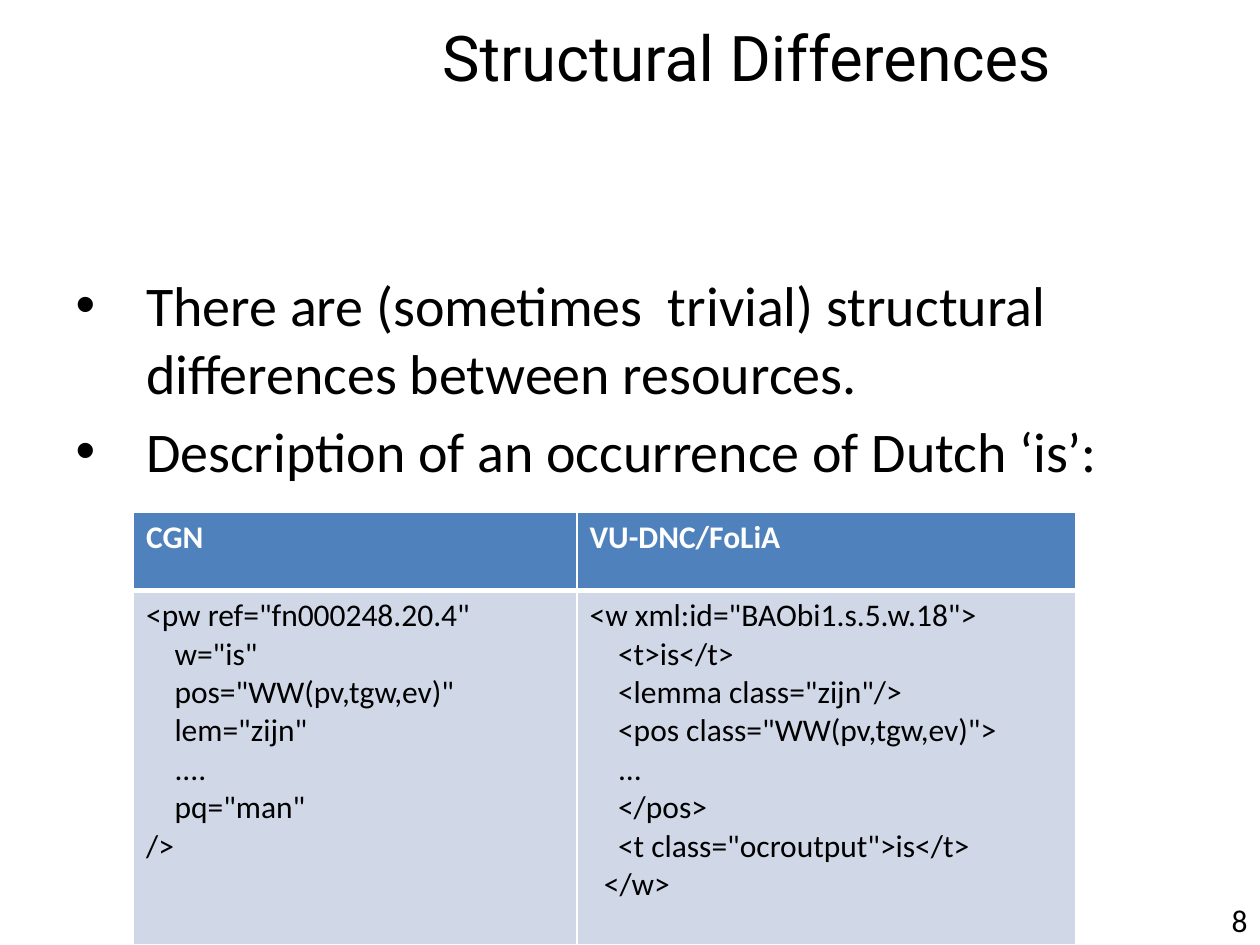
from lxml import etree
from pptx import Presentation
from pptx import util as u
from pptx.dml.color import RGBColor
from pptx.enum import text
from pptx.oxml.ns import qn

WIDE, HIGH = u.Inches(10), u.Inches(7.5)
BLACK = RGBColor(0, 0, 0)
WHITE = RGBColor(255, 255, 255)
BLUE = RGBColor(0x4F, 0x81, 0xBD)
PALE = RGBColor(0xD0, 0xD8, 0xE8)

POINTS = [
    "There are (sometimes  trivial) structural differences between resources.",
    "Description of an occurrence of Dutch ‘is’:",
]
HEADS = ["CGN", "VU-DNC/FoLiA"]
CODES = [
    """<pw ref="fn000248.20.4"
    w="is"
    pos="WW(pv,tgw,ev)"
    lem="zijn"
    ....
    pq="man"
/>""",
    """<w xml:id="BAObi1.s.5.w.18">
    <t>is</t>
    <lemma class="zijn"/>
    <pos class="WW(pv,tgw,ev)">
    ...
    </pos>
    <t class="ocroutput">is</t>
  </w>""",
]


def share(x, y, w, h):
    """Turn shares of the slide's size into lengths."""
    return int(x * WIDE), int(y * HIGH), int(w * WIDE), int(h * HIGH)


def place(shape, *box):
    shape.left, shape.top, shape.width, shape.height = share(*box)


def write(para, words, size=18, font="Calibri", color=BLACK, bold=False,
          align=text.PP_ALIGN.LEFT):
    para.text = words
    para.alignment = align
    for run in para.runs:
        face = run.font
        face.size, face.name, face.bold = u.Pt(size), font, bold
        face.color.rgb = color


def bullet(para, indent):
    props = para._p.get_or_add_pPr()
    props.set("marL", str(indent))
    props.set("indent", str(-indent))
    etree.SubElement(props, qn("a:buFont"), typeface="Arial")
    etree.SubElement(props, qn("a:buChar"), char="•")


def add_title(slide):
    title = slide.shapes.title
    place(title, 0.185, 0, 0.815, 0.12)
    frame = title.text_frame
    frame.vertical_anchor = text.MSO_ANCHOR.MIDDLE
    write(frame.paragraphs[0], "Structural Differences", size=36,
          font="Roboto", align=text.PP_ALIGN.CENTER)


def add_list(slide):
    body = slide.placeholders[1]
    place(body, 0.05, 0.28, 0.9, 0.62)
    frame = body.text_frame
    frame.auto_size = text.MSO_AUTO_SIZE.NONE
    for row, words in enumerate(POINTS):
        para = frame.add_paragraph() if row else frame.paragraphs[0]
        bullet(para, u.Inches(0.56))
        para.space_before = u.Pt(6.4 if row else 0)
        write(para, words, size=32)


def edge(cell, **widths):
    """Draw white borders; widths are points keyed by side L, R, T, B."""
    props = cell._tc.get_or_add_tcPr()
    for spot, side in enumerate("LRTB"):
        line = etree.Element(qn("a:ln" + side),
                             w=str(u.Pt(widths.get(side, 1))))
        fill = etree.SubElement(line, qn("a:solidFill"))
        etree.SubElement(fill, qn("a:srgbClr"), val=str(WHITE))
        props.insert(spot, line)


def fill_cell(cell, words, back, **style):
    cell.fill.solid()
    cell.fill.fore_color.rgb = back
    write(cell.text_frame.paragraphs[0], words, **style)


def add_table(slide):
    table = slide.shapes.add_table(
        2, 2, *share(0.106, 0.542, 0.748, 0.458)).table
    for col, wide in zip(table.columns, (3.52, 3.96)):
        col.width = u.Inches(wide)
    for row, high in zip(table.rows, (0.62, 2.81)):
        row.height = u.Inches(high)
    for col, (head, code) in enumerate(zip(HEADS, CODES)):
        top, low = table.cell(0, col), table.cell(1, col)
        fill_cell(top, head, BLUE, color=WHITE, bold=True)
        fill_cell(low, code, PALE)
        edge(top, B=3)
        edge(low, T=3)


def add_number(slide):
    box = slide.shapes.add_textbox(*share(0.894, 0.947, 0.106, 0.053))
    box.text_frame.word_wrap = True
    write(box.text_frame.paragraphs[0], "8", align=text.PP_ALIGN.RIGHT)


def main():
    deck = Presentation()
    deck.slide_width, deck.slide_height = WIDE, HIGH
    slide = deck.slides.add_slide(deck.slide_layouts[1])
    add_title(slide)
    add_list(slide)
    add_number(slide)
    add_table(slide)
    deck.save("out.pptx")


if __name__ == "__main__":
    main()
